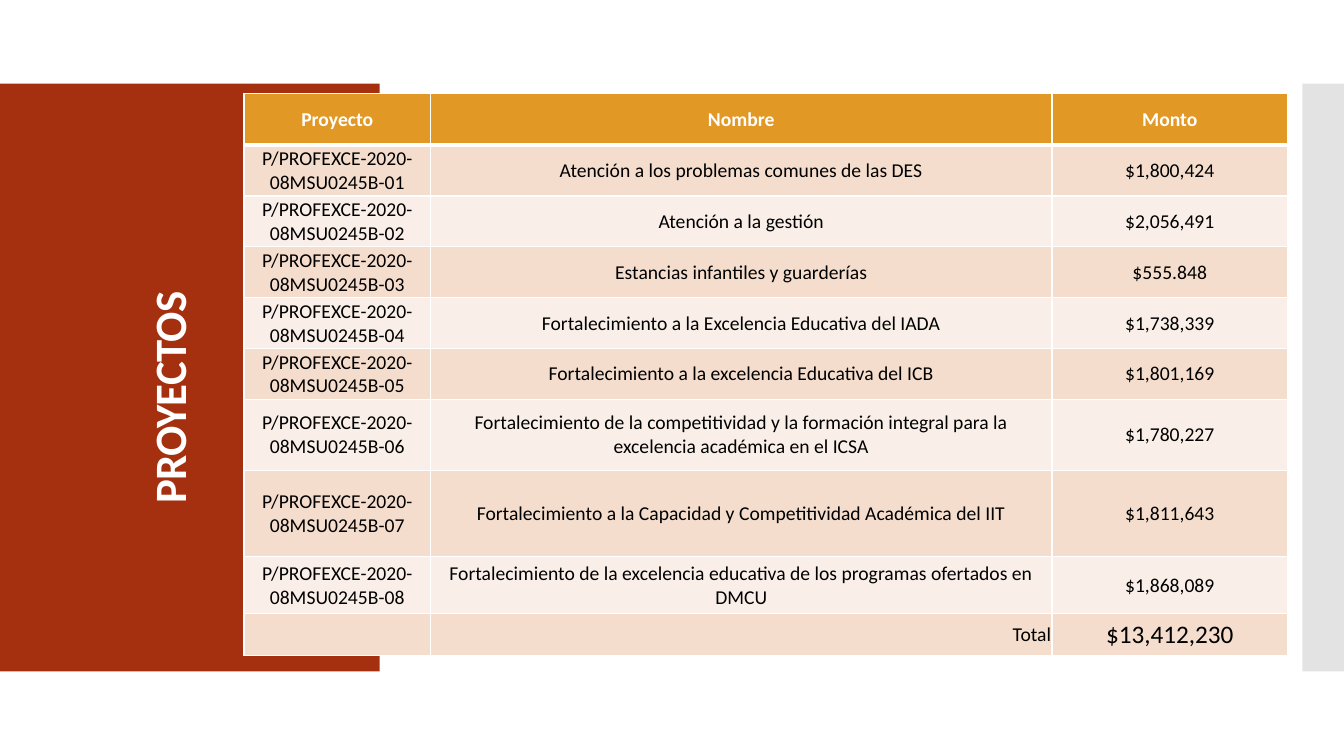
from lxml import etree
from pptx import Presentation
from pptx.dml.color import RGBColor
from pptx.enum.shapes import MSO_SHAPE
from pptx.enum.text import MSO_ANCHOR, MSO_AUTO_SIZE, PP_ALIGN
from pptx.oxml.ns import qn
from pptx.util import Cm, Pt

RECTANGLE = MSO_SHAPE.RECTANGLE
MIDDLE, BOTTOM = MSO_ANCHOR.MIDDLE, MSO_ANCHOR.BOTTOM
LEFT, CENTER, RIGHT = PP_ALIGN.LEFT, PP_ALIGN.CENTER, PP_ALIGN.RIGHT
NO_AUTOFIT = MSO_AUTO_SIZE.NONE

FONT = "Calibri"
WHITE, BLACK = "FFFFFF", "000000"
RED, GREY, ORANGE = "A5300F", "C8C8C8", "E19825"
BANDS = ("F4DDCD", "F9EFE8")

COLUMN_WIDTHS = (4.7, 15.66, 5.94)
ROW_HEIGHTS = (1.3, 1.28, 1.28, 1.28, 1.28, 1.28, 1.79, 2.17, 1.44, 1.06)
HEADERS = ("Proyecto", "Nombre", "Monto")
PROJECTS = (
    ("Atención a los problemas comunes de las DES", "$1,800,424"),
    ("Atención a la gestión", "$2,056,491"),
    ("Estancias infantiles y guarderías", "$555.848"),
    ("Fortalecimiento a la Excelencia Educativa del IADA", "$1,738,339"),
    ("Fortalecimiento a la excelencia Educativa del ICB", "$1,801,169"),
    ("Fortalecimiento de la competitividad y la formación integral para la "
     "excelencia académica en el ICSA", "$1,780,227"),
    ("Fortalecimiento a la Capacidad y Competitividad Académica del IIT", "$1,811,643"),
    ("Fortalecimiento de la excelencia educativa de los programas ofertados en DMCU",
     "$1,868,089"),
)
TOTAL = ("", "Total", "$13,412,230")


def color(value):
    return RGBColor.from_string(value)


def format_text(text_frame, size, font_color, bold, alignment):
    for paragraph in text_frame.paragraphs:
        paragraph.alignment = alignment
        for run in paragraph.runs:
            run.font.name = FONT
            run.font.size = Pt(size)
            run.font.bold = bold
            run.font.color.rgb = color(font_color)


def add_panel(slide, left, top, width, height, fill, opacity=100):
    shape = slide.shapes.add_shape(RECTANGLE, Cm(left), Cm(top), Cm(width), Cm(height))
    shape.shadow.inherit = False
    shape.fill.solid()
    shape.fill.fore_color.rgb = color(fill)
    shape.line.fill.background()
    if opacity < 100:
        fill_color = shape.fill._xPr.find(qn("a:solidFill"))[0]
        etree.SubElement(fill_color, qn("a:alpha"), val=str(opacity * 1000))


def place_title(slide, text):
    title = slide.shapes.title
    slide.shapes._spTree.append(title._element)
    title.left, title.top, title.width, title.height = Cm(0.15), Cm(8.03), Cm(7.7), Cm(2.13)
    title.rotation = 270
    text_frame = title.text_frame
    text_frame.text = text
    text_frame.word_wrap = True
    text_frame.auto_size = NO_AUTOFIT
    text_frame.vertical_anchor = BOTTOM
    format_text(text_frame, 32, WHITE, True, LEFT)
    paragraph = text_frame.paragraphs[0]
    paragraph.line_spacing = 0.9
    paragraph.runs[0].font._element.set("spc", "-60")


def set_borders(cell, top, bottom):
    properties = cell._tc.get_or_add_tcPr()
    for side, width in (("L", 1), ("R", 1), ("T", top), ("B", bottom)):
        line = etree.SubElement(properties, qn(f"a:ln{side}"), w=str(Pt(width)))
        fill = etree.SubElement(line, qn("a:solidFill"))
        etree.SubElement(fill, qn("a:srgbClr"), val=WHITE)


def fill_cell(cell, text, row_index):
    is_header = row_index == 0
    set_borders(cell, 3 if row_index == 1 else 1, 3 if is_header else 1)
    cell.fill.solid()
    cell.fill.fore_color.rgb = color(ORANGE if is_header else BANDS[(row_index - 1) % 2])
    cell.vertical_anchor = MIDDLE
    if not is_header:
        cell.margin_left = cell.margin_right = cell.margin_top = Cm(0.02)
        cell.margin_bottom = Cm(0)
    cell.text_frame.text = text
    format_text(
        cell.text_frame,
        18 if text == TOTAL[-1] else 14,
        WHITE if is_header else BLACK,
        is_header,
        RIGHT if text == TOTAL[1] else CENTER,
    )


def add_project_table(slide, left, top):
    projects = [
        (f"P/PROFEXCE-2020-08MSU0245B-{number:02}", name, amount)
        for number, (name, amount) in enumerate(PROJECTS, 1)
    ]
    rows = [HEADERS, *projects, TOTAL]
    table = slide.shapes.add_table(
        len(rows), len(HEADERS), Cm(left), Cm(top),
        Cm(sum(COLUMN_WIDTHS)), Cm(sum(ROW_HEIGHTS)),
    ).table
    for column, width in zip(table.columns, COLUMN_WIDTHS):
        column.width = Cm(width)
    for row_index, (values, height) in enumerate(zip(rows, ROW_HEIGHTS)):
        table.rows[row_index].height = Cm(height)
        for column_index, text in enumerate(values):
            fill_cell(table.cell(row_index, column_index), text, row_index)


def main():
    presentation = Presentation()
    presentation.slide_width, presentation.slide_height = Cm(33.87), Cm(19.05)
    slide = presentation.slides.add_slide(presentation.slide_layouts[5])
    add_panel(slide, 0, 2.11, 9.57, 14.81, RED)
    add_panel(slide, 32.82, 2.11, 1.05, 14.81, GREY, 50)
    place_title(slide, "PROYECTOS")
    add_project_table(slide, 6.15, 2.36)
    presentation.save("out.pptx")


if __name__ == "__main__":
    main()
